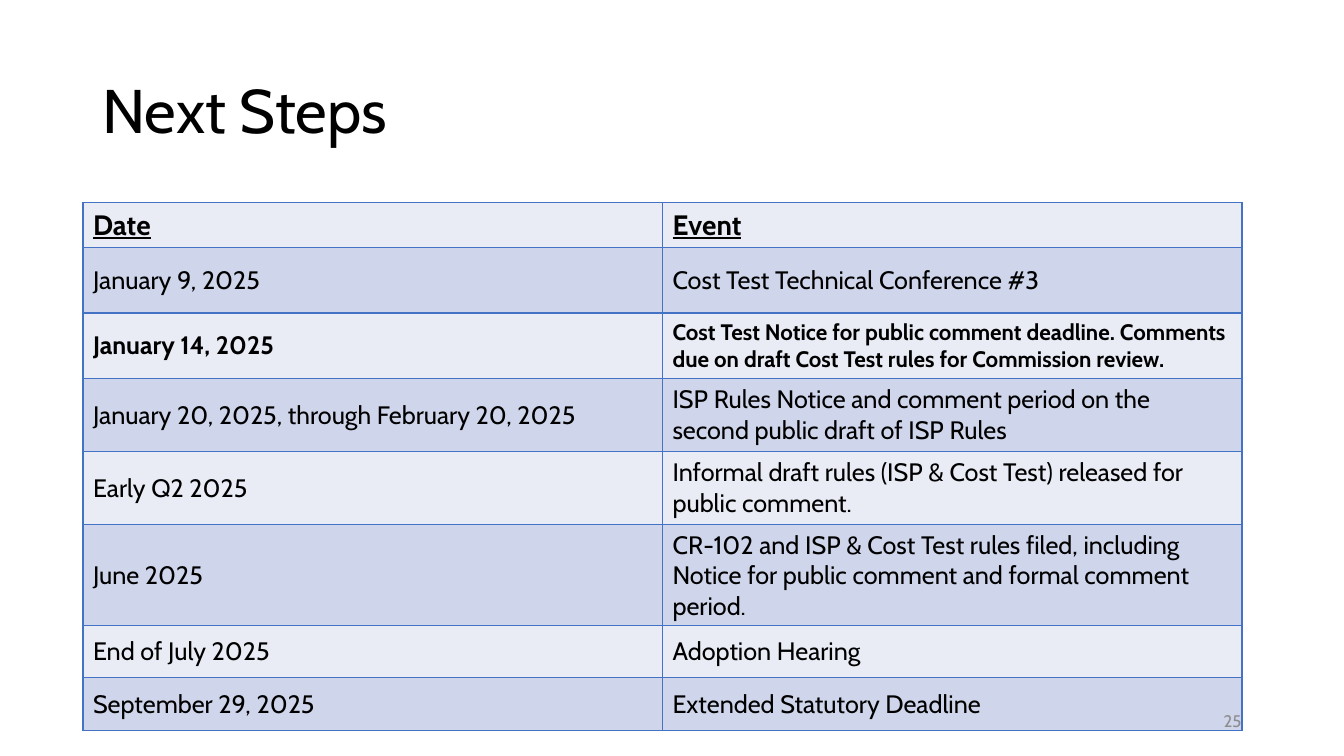
import pptx
import pptx.util
import pptx.oxml
import pptx.oxml.ns
import pptx.dml.color
import pptx.enum.text

Cm = pptx.util.Cm
Pt = pptx.util.Pt
RGBColor = pptx.dml.color.RGBColor
MID = pptx.enum.text.MSO_ANCHOR.MIDDLE
LEFT = pptx.enum.text.PP_ALIGN.LEFT
RIGHT = pptx.enum.text.PP_ALIGN.RIGHT

BLACK = RGBColor(0x00, 0x00, 0x00)
GRAY = RGBColor(0x8C, 0x8C, 0x8C)
BLUE = RGBColor(0x44, 0x72, 0xC4)
BANDS = RGBColor(0xE9, 0xEB, 0xF5), RGBColor(0xCF, 0xD5, 0xEA)

BASE = {"name": "Cabin", "size": Pt(18), "bold": False}
HEAD = {"size": Pt(20), "bold": True, "underline": True}
STRONG = {"bold": True}
NOTE = {"bold": True, "size": Pt(16)}

STEPS = [
    (1.14, "Date", HEAD, "Event", HEAD),
    (1.65, "January 9, 2025", {}, "Cost Test Technical Conference #3", {}),
    (1.65, "January 14, 2025", STRONG,
     "Cost Test Notice for public comment deadline. Comments due on draft "
     "Cost Test rules for Commission review.", NOTE),
    (1.84, "January 20, 2025, through February 20, 2025", {},
     "ISP Rules Notice and comment period on the second public draft of ISP Rules", {}),
    (1.84, "Early Q2 2025", {},
     "Informal draft rules (ISP & Cost Test) released for public comment.", {}),
    (1.84, "June 2025", {},
     "CR-102 and ISP & Cost Test rules filed, including Notice for public "
     "comment and formal comment period.", {}),
    (1.32, "End of July 2025", {}, "Adoption Hearing", {}),
    (1.32, "September 29, 2025", {}, "Extended Statutory Deadline", {}),
]


def write(para, text, form, color=BLACK):
    run = para.add_run()
    run.text = text
    for key, value in {**BASE, **form}.items():
        setattr(run.font, key, value)
    run.font.color.rgb = color


def label(slide, box, text, size, color=BLACK, align=LEFT, space=1.0):
    frame = slide.shapes.add_textbox(*map(Cm, box)).text_frame
    frame.word_wrap = True
    frame.vertical_anchor = MID
    para = frame.paragraphs[0]
    para.alignment = align
    para.line_spacing = space
    write(para, text, {"size": Pt(size)}, color)


def edge(cell):
    props = cell._tc.get_or_add_tcPr()
    for side in "LRTB":
        props.append(pptx.oxml.parse_xml(
            f'<a:ln{side} {pptx.oxml.ns.nsdecls("a")} w="{Pt(1)}"><a:solidFill>'
            f'<a:srgbClr val="{BLUE}"/></a:solidFill></a:ln{side}>'))


def grid(slide, box):
    table = slide.shapes.add_table(len(STEPS), 2, *map(Cm, box)).table
    table.first_row = table.horz_banding = False
    for col in table.columns:
        col.width = Cm(box[2] / 2)
    for i, (high, date, look, event, form) in enumerate(STEPS):
        table.rows[i].height = Cm(high)
        for cell, text, style in zip(table.rows[i].cells, (date, event), (look, form)):
            edge(cell)
            cell.fill.solid()
            cell.fill.fore_color.rgb = BANDS[i % 2]
            cell.vertical_anchor = MID
            write(cell.text_frame.paragraphs[0], text, style)


def main():
    deck = pptx.Presentation()
    deck.slide_width, deck.slide_height = Cm(33.87), Cm(19.05)
    slide = deck.slides.add_slide(deck.slide_layouts[6])
    label(slide, (2.33, 1.01, 29.21, 3.68), "Next Steps", 44, space=0.9)
    grid(slide, (2.09, 5.1, 29.21, 12.6))
    label(slide, (23.92, 17.66, 7.62, 1.01), "25", 12, GRAY, RIGHT)
    deck.save("out.pptx")


if __name__ == "__main__":
    main()
